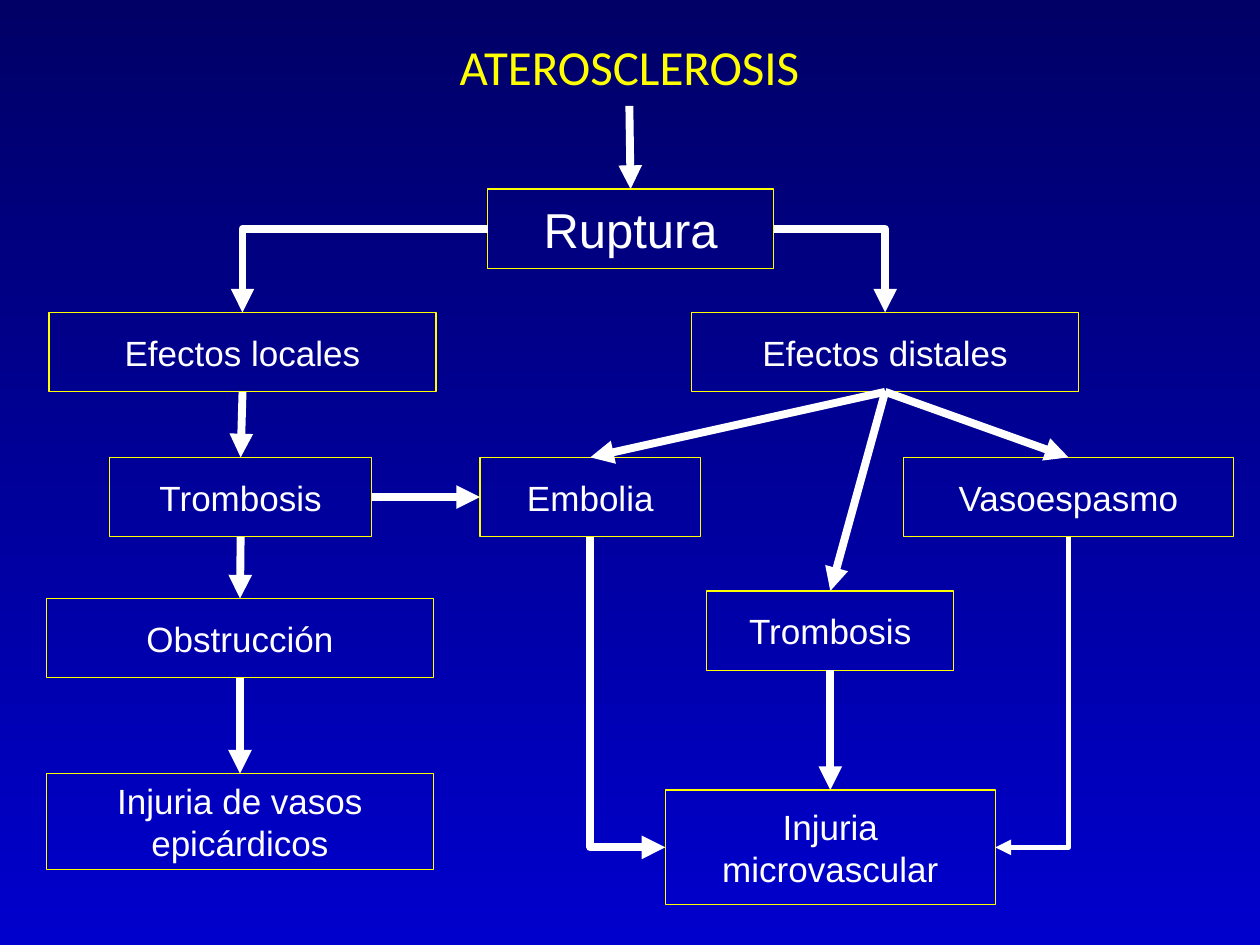
import pptx
import pptx.dml.color
import pptx.enum.shapes
import pptx.enum.text
import pptx.oxml
import pptx.oxml.ns
import pptx.util

Inches = pptx.util.Inches
Pt = pptx.util.Pt

THEME = {
    "top": "000066", "bottom": "0000CC", "accent": "FFFF00", "light": "FFFFFF",
    "title_font": "Calibri", "body_font": "Arial",
    "large": 28, "normal": 20, "border": 0.75, "arrow": 4.5, "thin_arrow": 3,
}

TITLE = ("ATEROSCLEROSIS", 2.79, 0.21, 4.41, 0.63)

# Box name: text, left, top, width, height
BOXES = {
    "rupture": ("Ruptura", 3.87, 1.5, 2.27, 0.63),
    "local": ("Efectos locales", 0.39, 2.48, 3.07, 0.63),
    "local thrombosis": ("Trombosis", 0.87, 3.63, 2.08, 0.63),
    "obstruction": ("Obstrucción", 0.37, 4.75, 3.07, 0.63),
    "epicardial injury": ("Injuria de vasos epicárdicos", 0.37, 6.14, 3.07, 0.76),
    "distal": ("Efectos distales", 5.49, 2.48, 3.07, 0.63),
    "embolism": ("Embolia", 3.81, 3.63, 1.75, 0.63),
    "distal thrombosis": ("Trombosis", 5.61, 4.69, 1.96, 0.63),
    "vasospasm": ("Vasoespasmo", 7.17, 3.63, 2.62, 0.63),
    "microvascular injury": ("Injuria microvascular", 5.28, 6.27, 2.62, 0.91),
}

TOP, LEFT, BOTTOM, RIGHT = range(4)

# Start box, side, end box, side
STRAIGHT_ARROWS = [
    ("title", BOTTOM, "rupture", TOP),
    ("local", BOTTOM, "local thrombosis", TOP),
    ("local thrombosis", BOTTOM, "obstruction", TOP),
    ("obstruction", BOTTOM, "epicardial injury", TOP),
    ("distal", BOTTOM, "embolism", TOP),
    ("local thrombosis", RIGHT, "embolism", LEFT),
    ("distal", BOTTOM, "vasospasm", TOP),
    ("distal", BOTTOM, "distal thrombosis", TOP),
    ("distal thrombosis", BOTTOM, "microvascular injury", TOP),
]

# The same, then line width
BENT_ARROWS = [
    ("rupture", LEFT, "local", TOP, "arrow"),
    ("rupture", RIGHT, "distal", TOP, "arrow"),
    ("embolism", BOTTOM, "microvascular injury", LEFT, "arrow"),
    ("vasospasm", BOTTOM, "microvascular injury", RIGHT, "thin_arrow"),
]


def color(name):
    return pptx.dml.color.RGBColor.from_string(THEME[name])


def write(shape, text, font, size, ink):
    frame = shape.text_frame
    frame.word_wrap = True
    frame.vertical_anchor = pptx.enum.text.MSO_ANCHOR.MIDDLE
    para = frame.paragraphs[0]
    para.alignment = pptx.enum.text.PP_ALIGN.CENTER
    span = para.add_run()
    span.text = text
    span.font.name = THEME[font]
    span.font.size = Pt(THEME[size])
    span.font.color.rgb = color(ink)


def add_box(page, name, text, *place):
    box = page.shapes.add_shape(
        pptx.enum.shapes.MSO_SHAPE.RECTANGLE, *map(Inches, place))
    box.shadow.inherit = False
    box.fill.background()
    box.line.color.rgb = color("accent")
    box.line.width = Pt(THEME["border"])
    write(box, text, "body_font", "large" if name == "rupture" else "normal", "light")
    return box


def add_arrow(page, kind, start, start_side, end, end_side, width="arrow"):
    arrow = page.shapes.add_connector(kind, 0, 0, 0, 0)
    arrow.begin_connect(start, start_side)
    arrow.end_connect(end, end_side)
    arrow.line.color.rgb = color("light")
    arrow.line.width = Pt(THEME[width])
    properties = arrow.line._get_or_add_ln()
    head = pptx.oxml.parse_xml(
        f'<a:tailEnd {pptx.oxml.ns.nsdecls("a")} type="triangle"/>')
    properties.append(head)
    properties.getparent().append(
        pptx.oxml.parse_xml(f'<a:effectLst {pptx.oxml.ns.nsdecls("a")}/>'))
    return arrow


def bend_once(arrow, start_side):
    """Give an elbow a single corner, leaving along the side it starts from."""
    shape_properties = arrow._element.spPr
    shape_properties.prstGeom.set("prst", "bentConnector2")
    if start_side != BOTTOM:
        return
    # Going down first is a quarter turn about the centre of the elbow
    goes_right = arrow.end_x > arrow.begin_x
    left, top, width, height = arrow.left, arrow.top, arrow.width, arrow.height
    arrow.left = left + (width - height) // 2
    arrow.top = top + (height - width) // 2
    arrow.width, arrow.height = height, width
    frame = shape_properties.xfrm
    frame.set("rot", str((270 if goes_right else 90) * 60000))
    frame.set("flipH", "1" if goes_right else "0")


def main():
    deck = pptx.Presentation()
    deck.slide_width, deck.slide_height = Inches(10), Inches(7.5)
    page = deck.slides.add_slide(deck.slide_layouts[6])

    # Background
    fill = page.background.fill
    fill.gradient()
    fill.gradient_angle = 270
    for stop, name in zip(fill.gradient_stops, ("top", "bottom")):
        stop.color.rgb = color(name)

    # Title and boxes
    text, *place = TITLE
    title = page.shapes.add_textbox(*map(Inches, place))
    write(title, text, "title_font", "large", "accent")
    shapes = {name: add_box(page, name, *box) for name, box in BOXES.items()}
    shapes["title"] = title

    # Arrows
    kinds = pptx.enum.shapes.MSO_CONNECTOR
    for start, start_side, end, end_side in STRAIGHT_ARROWS:
        add_arrow(page, kinds.STRAIGHT, shapes[start], start_side, shapes[end], end_side)
    for start, start_side, end, end_side, width in BENT_ARROWS:
        arrow = add_arrow(page, kinds.ELBOW, shapes[start], start_side,
                          shapes[end], end_side, width)
        bend_once(arrow, start_side)

    deck.save("out.pptx")


if __name__ == "__main__":
    main()
